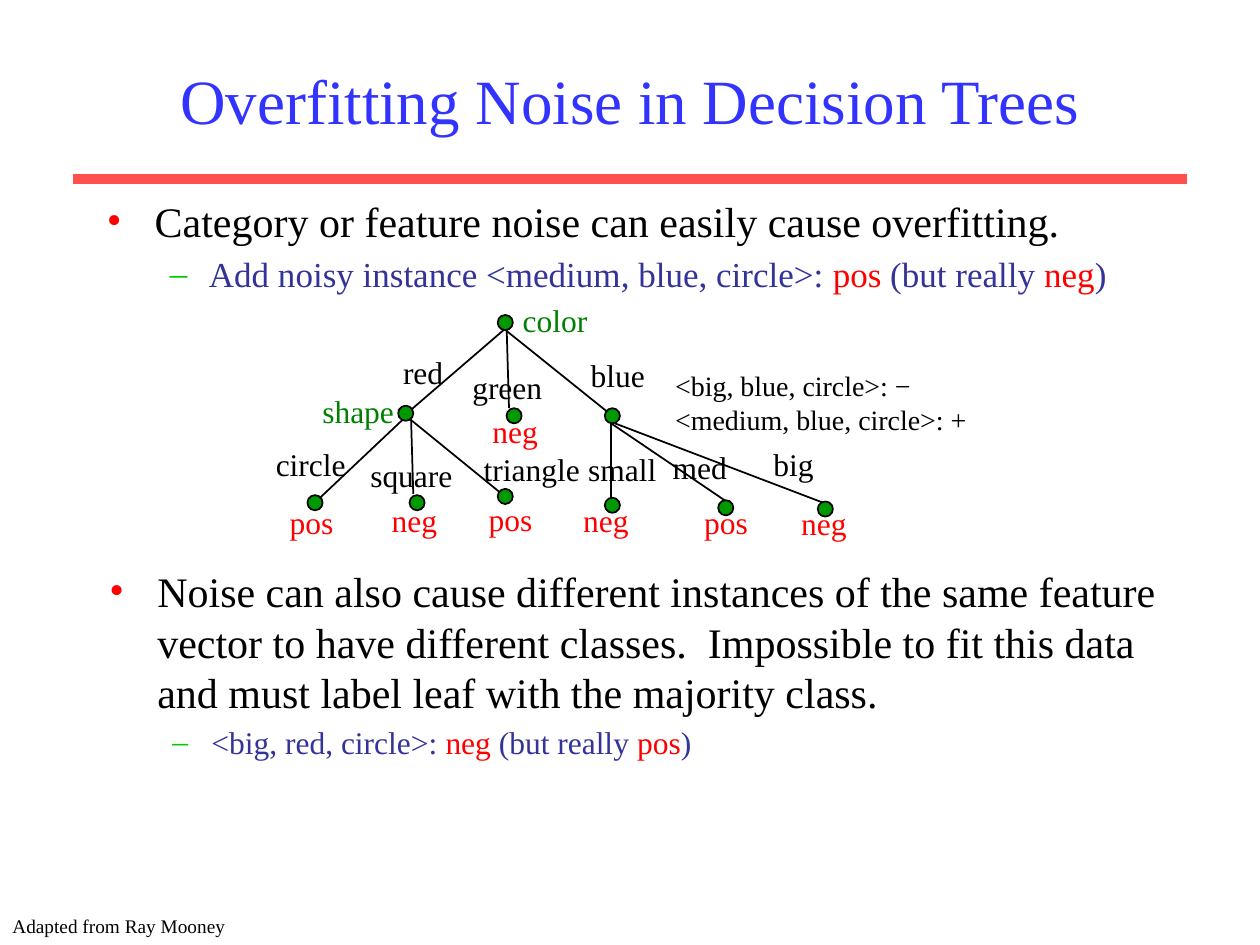
from dataclasses import dataclass

from lxml.etree import SubElement
from pptx import Presentation
from pptx.dml.color import RGBColor
from pptx.enum.shapes import MSO_CONNECTOR, MSO_SHAPE
from pptx.enum.text import MSO_ANCHOR, MSO_AUTO_SIZE, PP_ALIGN
from pptx.oxml.ns import qn
from pptx.util import Inches, Pt


@dataclass(frozen=True)
class Theme:
    font: str = "Times New Roman"
    title: str = "3333FF"
    rule: str = "FF5050"
    ink: str = "000000"
    detail: str = "333399"
    value: str = "FF0000"
    feature: str = "008000"
    node: str = "009900"
    bullets: tuple = (("•", "FF0000", 0.38, 0.38), ("–", "00CC00", 0.81, 0.31))
    title_pt: int = 36
    point_pt: int = 24
    detail_pt: int = 20
    label_pt: int = 18
    note_pt: int = 16
    credit_pt: int = 11


T = Theme()
COLS, ROWS = 100, 75
CELL = Inches(10) // COLS
NODE = 1.2

NODES = {
    "color": (39.5, 25), "shape": (31.6, 32.2), "green": (40.2, 32.4),
    "blue": (48, 32.4), "circle": (24.4, 39.3), "square": (32.5, 39.3),
    "triangle": (39.5, 38.8), "small": (48, 39.5), "med": (57, 39.7),
    "big": (64.9, 39.8),
}
EDGES = [
    (40.2, 26, 32.3, 32.8), (40.2, 25.6, 40.4, 32.4), (39.5, 25.7, 48.1, 32.6),
    (32.5, 32.8, 25.3, 39.6), (32.6, 32.4, 32.8, 39.2), (31.6, 32.5, 40.2, 39.5),
    (48.5, 33.5, 48.5, 39.7), (48.5, 33.6, 57.5, 39.7), (48.8, 33.6, 65.6, 40),
]
LABELS = {
    T.feature: [("color", 40.5, 23.4, 7.4), ("shape", 24.6, 30.6, 8)],
    T.ink: [
        ("red", 31, 27.5, 5.5), ("green", 36.5, 28.7, 7.8), ("blue", 45.9, 27.8, 6.6),
        ("circle", 20.9, 34.8, 7.8), ("square", 28.4, 35.7, 8.8),
        ("triangle", 37.4, 35.2, 9.9), ("small", 45.7, 35.2, 7.7),
        ("med", 52.4, 35.1, 6.6), ("big", 60.4, 34.8, 5.5),
    ],
    T.value: [
        ("neg", 38.1, 32.2, 5.9), ("pos", 22, 39.4, 5.8), ("neg", 30.1, 39.3, 5.9),
        ("pos", 37.8, 39.2, 5.8), ("neg", 45.3, 39.3, 5.9),
        ("pos", 54.9, 39.4, 5.8), ("neg", 62.6, 39.5, 5.9),
    ],
}


def cells(*counts):
    return [round(n * CELL) for n in counts]


def rgb(color):
    return RGBColor.from_string(color)


def add_run(p, text, size, color):
    r = p.add_run()
    r.text = text
    r.font.name = T.font
    r.font.size = Pt(size)
    r.font.color.rgb = rgb(color)


def add_box(s, box, wrap=True):
    tf = s.shapes.add_textbox(*cells(*box)).text_frame
    tf.word_wrap = wrap
    tf.auto_size = MSO_AUTO_SIZE.NONE if wrap else MSO_AUTO_SIZE.SHAPE_TO_FIT_TEXT
    return tf


def next_paragraph(tf, first):
    return tf.paragraphs[0] if first else tf.add_paragraph()


def add_label(s, lines, box, size, color):
    tf = add_box(s, box, wrap=False)
    for i, line in enumerate(lines):
        add_run(next_paragraph(tf, i == 0), line, size, color)


def add_title(s, text):
    tf = add_box(s, (7.5, 2.5, 85, 10.8))
    tf.vertical_anchor = MSO_ANCHOR.MIDDLE
    p = tf.paragraphs[0]
    p.alignment = PP_ALIGN.CENTER
    add_run(p, text, T.title_pt, T.title)


def set_bullet(p, level):
    char, color, left, hang = T.bullets[level]
    p.level = level
    pPr = p._p.get_or_add_pPr()
    pPr.set("marL", str(Inches(left)))
    pPr.set("indent", str(-Inches(hang)))
    clr = SubElement(pPr, qn("a:buClr"))
    SubElement(clr, qn("a:srgbClr")).set("val", color)
    SubElement(pPr, qn("a:buFont")).set("typeface", T.font)
    SubElement(pPr, qn("a:buChar")).set("char", char)


def add_bullets(s, box, point, detail, detail_pt):
    tf = add_box(s, box)
    items = [([(point, T.ink)], T.point_pt), (detail, detail_pt)]
    for level, (runs, size) in enumerate(items):
        p = next_paragraph(tf, level == 0)
        set_bullet(p, level)
        if level:
            p.space_before = Pt(size * 0.2)
        for text, color in runs:
            add_run(p, text, size, color)


def noisy(instance, label, truth):
    return [(instance, T.detail), (label, T.value), (" (but really ", T.detail),
            (truth, T.value), (")", T.detail)]


def add_line(s, ends, color, width):
    c = s.shapes.add_connector(MSO_CONNECTOR.STRAIGHT, *cells(*ends))
    c.line.color.rgb = rgb(color)
    c.line.width = Pt(width)
    SubElement(c._element.spPr, qn("a:effectLst"))


def add_node(s, col, row):
    sp = s.shapes.add_shape(MSO_SHAPE.OVAL, *cells(col, row, NODE, NODE))
    sp.shadow.inherit = False
    sp.fill.solid()
    sp.fill.fore_color.rgb = rgb(T.node)
    sp.line.color.rgb = rgb(T.ink)
    sp.line.width = Pt(1)


def add_tree(s):
    for ends in EDGES:
        add_line(s, ends, T.ink, 1)
    for place in NODES.values():
        add_node(s, *place)
    for color, labels in LABELS.items():
        for text, col, row, width in labels:
            add_label(s, [text], (col, row, width, 4), T.label_pt, color)


def main():
    prs = Presentation()
    prs.slide_width, prs.slide_height = cells(COLS, ROWS)
    s = prs.slides.add_slide(prs.slide_layouts[6])
    add_line(s, (5.8, 14.2, 94.2, 14.2), T.rule, 6)
    add_title(s, "Overfitting Noise in Decision Trees")
    add_bullets(s, (7.5, 15, 85, 9.3),
                "Category or feature noise can easily cause overfitting.",
                noisy("Add noisy instance <medium, blue, circle>: ", "pos", "neg"),
                T.detail_pt)
    add_tree(s)
    add_label(s, ["<big, blue, circle>: −", "<medium, blue, circle>: +"],
              (52.6, 28.8, 25.2, 6.4), T.note_pt, T.ink)
    add_bullets(s, (7.7, 44.4, 85.5, 30.6),
                "Noise can also cause different instances of the same feature "
                "vector to have different classes.  Impossible to fit this data "
                "and must label leaf with the majority class.",
                noisy("<big, red, circle>: ", "neg", "pos"), T.label_pt)
    add_label(s, ["Adapted from Ray Mooney"], (0, 72.1, 19.4, 2.9), T.credit_pt, T.ink)
    prs.save("out.pptx")


if __name__ == "__main__":
    main()
